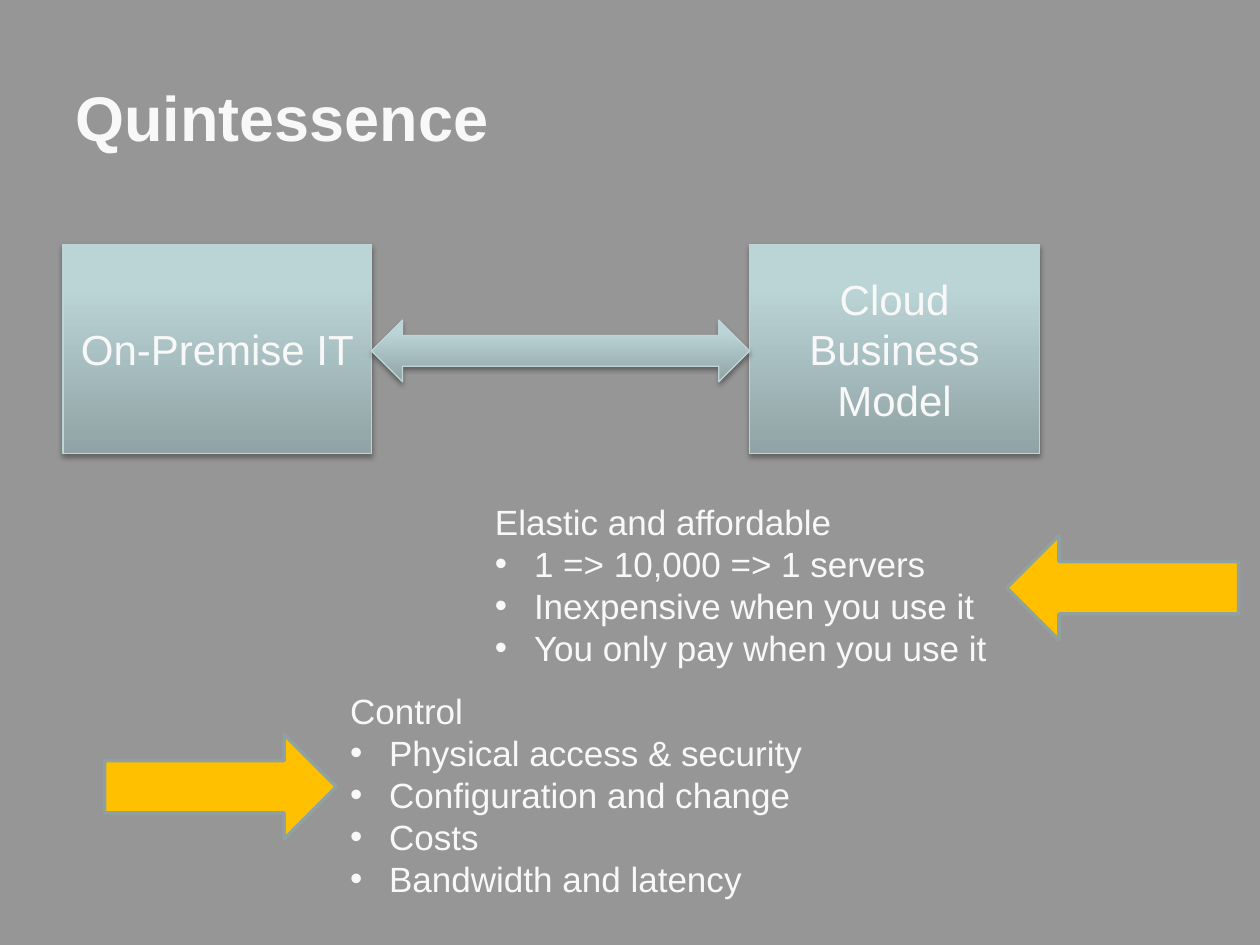
from dataclasses import dataclass

from lxml import etree
from pptx import Presentation
from pptx import util as u
from pptx.dml.color import RGBColor
from pptx.enum import shapes, text
from pptx.oxml import parse_xml
from pptx.oxml.ns import nsdecls, qn


@dataclass(frozen=True)
class Theme:
    background: str = "969696"
    ink: str = "F8F8F8"
    panel_line: str = "BFD4D6"
    pointer_fill: str = "FFC000"
    pointer_line: str = "91A0A1"
    gradient: tuple = ((0, "90A3A5"), (80, "BBD4D6"), (100, "BBD5D8"))
    font: str = "Arial"
    title_size: int = 36
    panel_size: int = 24
    list_size: int = 20


THEME = Theme()
SHAPE = shapes.MSO_SHAPE
BULLET_INDENT = u.Inches(0.31)


def color(value):
    return RGBColor.from_string(value)


def inches(place):
    return [u.Inches(length) for length in place]


def write(para, words, size, bold=False, align=None, bullet=False):
    """Fill one paragraph with formatted text."""
    if bullet:
        properties = para._p.get_or_add_pPr()
        properties.set("marL", str(BULLET_INDENT))
        properties.set("indent", str(-BULLET_INDENT))
        etree.SubElement(properties, qn("a:buFont")).set("typeface", THEME.font)
        etree.SubElement(properties, qn("a:buChar")).set("char", "•")
    if align is not None:
        para.alignment = align
    span = para.add_run()
    span.text = words
    span.font.name = THEME.font
    span.font.size = u.Pt(size)
    span.font.bold = bold
    span.font.color.rgb = color(THEME.ink)


def add_outlined(page, kind, place, line, width):
    box = page.shapes.add_shape(kind, *inches(place))
    box.shadow.inherit = False
    box.line.color.rgb = color(line)
    box.line.width = u.Pt(width)
    return box


def add_panel(page, kind, place, words=None):
    """Add a shape with a vertical gradient, a soft shadow and centred text."""
    box = add_outlined(page, kind, place, THEME.panel_line, 0.75)
    stops = "".join(
        f'<a:gs pos="{position * 1000}"><a:srgbClr val="{value}"/></a:gs>'
        for position, value in THEME.gradient)
    properties = box._element.spPr
    properties.find(qn("a:prstGeom")).addnext(parse_xml(
        f'<a:gradFill {nsdecls("a")} rotWithShape="1"><a:gsLst>{stops}</a:gsLst>'
        '<a:lin ang="16200000" scaled="0"/></a:gradFill>'))
    properties.find(qn("a:effectLst")).append(parse_xml(
        f'<a:outerShdw {nsdecls("a")} blurRad="{u.Pt(3.1)}" dist="{u.Pt(1.8)}" '
        'dir="5400000" rotWithShape="0"><a:srgbClr val="000000">'
        '<a:alpha val="35000"/></a:srgbClr></a:outerShdw>'))
    if words:
        frame = box.text_frame
        frame.word_wrap = True
        frame.vertical_anchor = text.MSO_ANCHOR.MIDDLE
        write(frame.paragraphs[0], words, THEME.panel_size,
              align=text.PP_ALIGN.CENTER)


def add_pointer(page, place, rotation=0):
    box = add_outlined(page, SHAPE.RIGHT_ARROW, place, THEME.pointer_line, 2)
    box.fill.solid()
    box.fill.fore_color.rgb = color(THEME.pointer_fill)
    box.rotation = rotation


def add_list(page, place, heading, items, wrap):
    frame = page.shapes.add_textbox(*inches(place)).text_frame
    frame.word_wrap = wrap
    frame.auto_size = text.MSO_AUTO_SIZE.SHAPE_TO_FIT_TEXT
    write(frame.paragraphs[0], heading, THEME.list_size)
    for item in items:
        write(frame.add_paragraph(), item, THEME.list_size, bullet=True)


def add_title(page, place, words):
    frame = page.shapes.add_textbox(*inches(place)).text_frame
    frame.word_wrap = True
    frame.vertical_anchor = text.MSO_ANCHOR.MIDDLE
    write(frame.paragraphs[0], words, THEME.title_size, bold=True)


def main():
    deck = Presentation()
    deck.slide_width, deck.slide_height = u.Inches(10), u.Inches(7.5)
    page = deck.slides.add_slide(deck.slide_layouts[6])
    page.background.fill.solid()
    page.background.fill.fore_color.rgb = color(THEME.background)

    # The two models and the range between them
    add_panel(page, SHAPE.RECTANGLE, (0.5, 1.94, 2.45, 1.66), "On-Premise IT")
    add_panel(page, SHAPE.RECTANGLE, (5.95, 1.94, 2.3, 1.66),
              "Cloud Business Model")
    add_panel(page, SHAPE.LEFT_RIGHT_ARROW, (2.95, 2.54, 3, 0.49))

    # Strengths of each model
    add_list(page, (2.68, 5.42, 3.82, 2.12), "Control",
             ("Physical access & security", "Configuration and change",
              "Costs", "Bandwidth and latency"), wrap=False)
    add_list(page, (3.83, 3.92, 4.25, 1.45), "Elastic and affordable",
             ("1 => 10,000 => 1 servers", "Inexpensive when you use it",
              "You only pay when you use it"), wrap=True)

    # Pointers to the lists
    add_pointer(page, (0.83, 5.83, 1.84, 0.83))
    add_pointer(page, (7.99, 4.25, 1.84, 0.83), rotation=180)

    # Title
    add_title(page, (0.5, 0.3, 9, 1.25), "Quintessence")

    deck.save("out.pptx")


if __name__ == "__main__":
    main()
